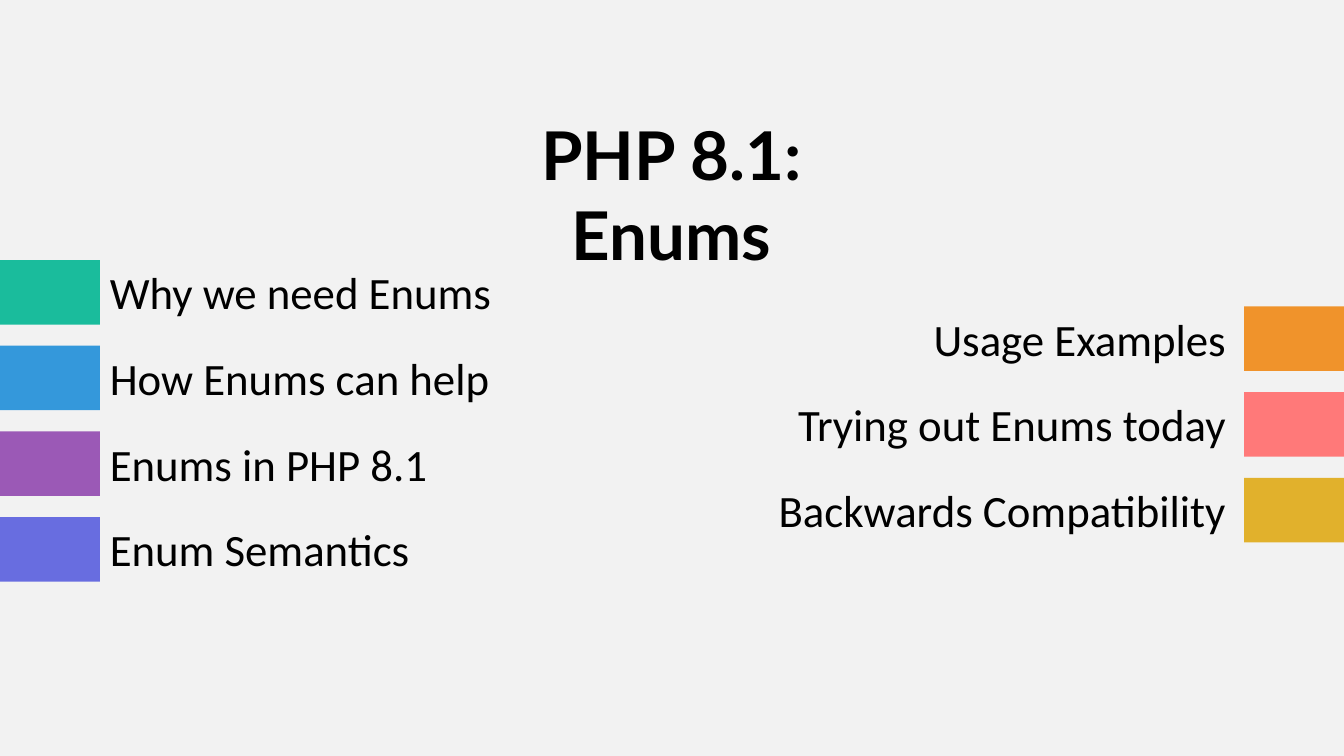
from dataclasses import dataclass

from pptx import Presentation
from pptx.dml.color import RGBColor
from pptx.enum.shapes import MSO_SHAPE
from pptx.enum.text import MSO_AUTO_SIZE, MSO_ANCHOR, PP_ALIGN
from pptx.util import Inches, Pt


@dataclass(frozen=True)
class Theme:
    background: str = "F2F2F2"
    ink: str = "000000"
    title_font: str = "Lato"
    topic_font: str = "Calibri"
    title_size: int = 48
    topic_size: int = 32


@dataclass(frozen=True)
class Box:
    left: float
    top: float
    width: float
    height: float

    def lengths(self):
        return [Inches(value) for value in (self.left, self.top, self.width, self.height)]


THEME = Theme()
PAGE_WIDTH, PAGE_HEIGHT = 13.33, 7.5
TAB_WIDTH, TAB_HEIGHT, ROW_PITCH = 0.99, 0.64, 0.85
RIGHT_TEXT_GAP = 0.08

LEFT_TOPICS = [
    ("Why we need Enums", 4.02, "1ABC9C"),
    ("How Enums can help", 4.01, "3498DB"),
    ("Enums in PHP 8.1", 3.39, "9B59B6"),
    ("Enum Semantics", 3.21, "686DE0"),
]
RIGHT_TOPICS = [
    ("Usage Examples", 3.13, "F0932B"),
    ("Trying out Enums today", 4.49, "FF7979"),
    ("Backwards Compatibility", 4.7, "E1B12C"),
]


def paint(fill, color):
    fill.solid()
    fill.fore_color.rgb = RGBColor.from_string(color)


def add_text(page, box, lines, alignment, font_values):
    frame = page.shapes.add_textbox(*box.lengths()).text_frame
    frame_values = {
        "word_wrap": False,
        "auto_size": MSO_AUTO_SIZE.SHAPE_TO_FIT_TEXT,
        "vertical_anchor": MSO_ANCHOR.TOP,
    }
    for name, value in frame_values.items():
        setattr(frame, name, value)
    para = frame.paragraphs[0]
    para.alignment = alignment
    for index, line in enumerate(lines):
        if index:
            para.add_line_break()
        span = para.add_run()
        span.text = line
        for name, value in font_values.items():
            setattr(span.font, name, value)
        span.font.color.rgb = RGBColor.from_string(THEME.ink)


def add_tab(page, box, color):
    tab = page.shapes.add_shape(MSO_SHAPE.RECTANGLE, *box.lengths())
    tab.shadow.inherit = False
    paint(tab.fill, color)
    tab.line.fill.background()


def add_topics(page, box, topics, on_right=False):
    font_values = {"name": THEME.topic_font, "size": Pt(THEME.topic_size)}
    alignment = PP_ALIGN.RIGHT if on_right else PP_ALIGN.LEFT
    for row, (label, width, color) in enumerate(topics):
        top = box.top + row * ROW_PITCH
        text_left = box.left - RIGHT_TEXT_GAP - width if on_right else box.left + box.width
        add_text(page, Box(text_left, top, width, box.height), [label], alignment, font_values)
        add_tab(page, Box(box.left, top, box.width, box.height), color)


def add_title(page, box):
    font_values = {"name": THEME.title_font, "size": Pt(THEME.title_size), "bold": True}
    add_text(page, box, ["PHP 8.1:", "Enums"], PP_ALIGN.CENTER, font_values)


def main():
    deck = Presentation()
    deck.slide_width, deck.slide_height = Inches(PAGE_WIDTH), Inches(PAGE_HEIGHT)
    page = deck.slides.add_slide(deck.slide_layouts[6])
    paint(page.background.fill, THEME.background)
    add_topics(page, Box(0, 2.58, TAB_WIDTH, TAB_HEIGHT), LEFT_TOPICS)
    right_tab = Box(PAGE_WIDTH - TAB_WIDTH, 3.04, TAB_WIDTH, TAB_HEIGHT)
    add_topics(page, right_tab, RIGHT_TOPICS, on_right=True)
    add_title(page, Box(4.25, 1.07, 4.82, 0.91))
    deck.save("out.pptx")


if __name__ == "__main__":
    main()
